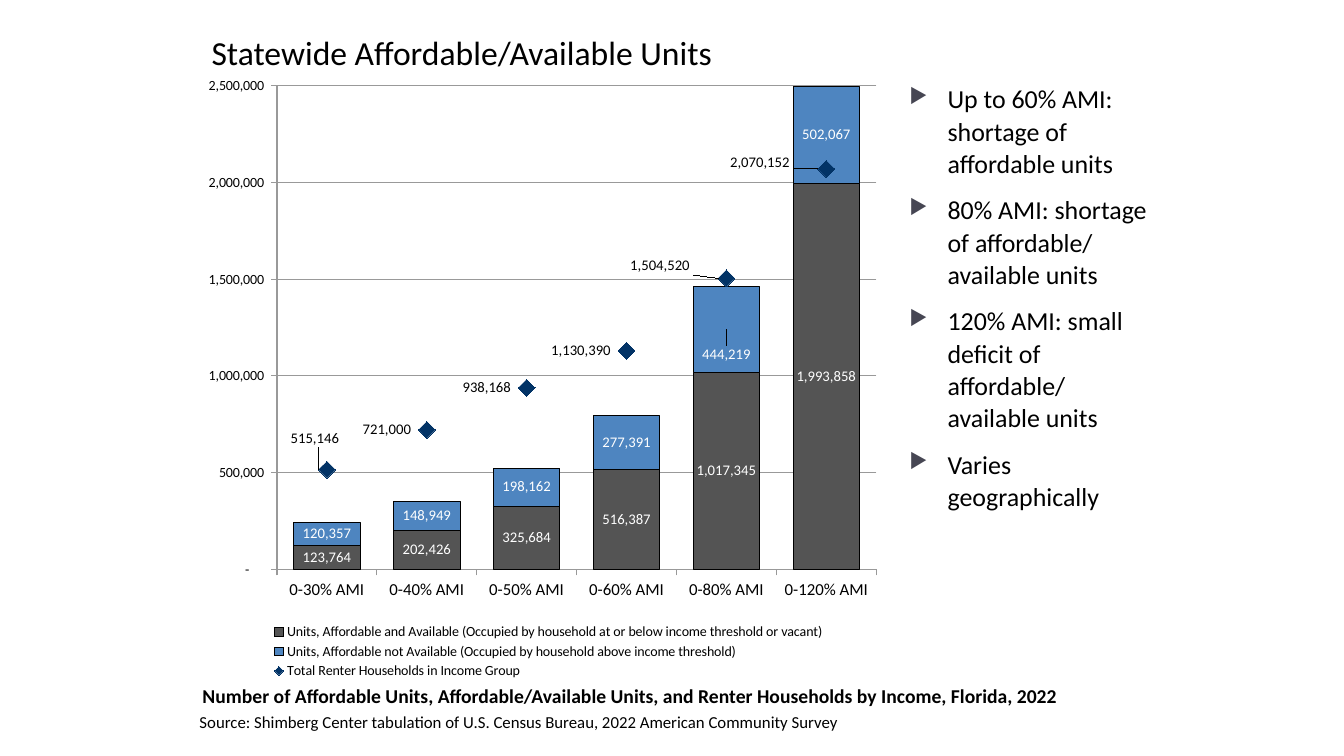
from lxml import etree
from pptx import Presentation
from pptx.chart.data import CategoryChartData
from pptx.dml.color import RGBColor
from pptx.enum.chart import (XL_CHART_TYPE, XL_LABEL_POSITION, XL_LEGEND_POSITION,
                             XL_MARKER_STYLE, XL_TICK_MARK)
from pptx.enum.text import MSO_ANCHOR
from pptx.oxml import parse_xml
from pptx.oxml.ns import nsdecls, qn
from pptx.util import Inches, Pt

STACKED = XL_CHART_TYPE.COLUMN_STACKED
CENTER, LEFT = XL_LABEL_POSITION.CENTER, XL_LABEL_POSITION.LEFT
LEGEND_BOTTOM = XL_LEGEND_POSITION.BOTTOM
DIAMOND = XL_MARKER_STYLE.DIAMOND
TICK_OUTSIDE = XL_TICK_MARK.OUTSIDE
ANCHOR_TOP, ANCHOR_BOTTOM = MSO_ANCHOR.TOP, MSO_ANCHOR.BOTTOM

BLACK = RGBColor(0x00, 0x00, 0x00)
WHITE = RGBColor(0xFF, 0xFF, 0xFF)
GRAY = RGBColor(0x54, 0x54, 0x54)
BLUE = RGBColor(0x4E, 0x85, 0xC0)
NAVY = RGBColor(0x02, 0x33, 0x66)
GRID = RGBColor(0x99, 0x99, 0x99)
BULLET_COLOR = "464653"

FONT = "Calibri"
NUMBER_FORMAT = r'_(* #,##0_);_(* \(#,##0\);_(* "-"??_);_('
CATEGORIES = [f"0-{limit}% AMI" for limit in (30, 40, 50, 60, 80, 120)]
AVAILABLE = ("Units, Affordable and Available (Occupied by household at or below "
             "income threshold or vacant)",
             (123764, 202426, 325684, 516387, 1017345, 1993858))
NOT_AVAILABLE = ("Units, Affordable not Available (Occupied by household above "
                 "income threshold)",
                 (120357, 148949, 198162, 277391, 444219, 502067))
RENTERS = ("Total Renter Households in Income Group",
           (515146, 721000, 938168, 1130390, 1504520, 2070152))
FINDINGS = [
    "Up to 60% AMI: shortage of affordable units",
    "80% AMI: shortage of affordable/ available units",
    "120% AMI: small deficit of affordable/ available units",
    "Varies geographically",
]


def add_text(slide, box, lines, size, bold=False, anchor=ANCHOR_TOP, space_before=0,
             line_spacing=None, bulleted=False):
    """Add a wrapped text box with one paragraph per line."""
    frame = slide.shapes.add_textbox(*map(Inches, box)).text_frame
    frame.word_wrap = True
    frame.vertical_anchor = anchor
    for index, line in enumerate(lines):
        paragraph = frame.paragraphs[0] if index == 0 else frame.add_paragraph()
        paragraph.text = line
        if bulleted:
            add_bullet(paragraph)
        paragraph.line_spacing = line_spacing
        paragraph.space_before = Pt(space_before if index else 0)
        paragraph.font.name = FONT
        paragraph.font.size = Pt(size)
        paragraph.font.bold = bold
        paragraph.font.color.rgb = BLACK


def add_bullet(paragraph):
    """Give a paragraph a hanging triangle bullet."""
    properties = paragraph._p.get_or_add_pPr()
    properties.set("marL", str(Inches(0.38)))
    properties.set("indent", str(-Inches(0.38)))
    color = etree.SubElement(properties, qn("a:buClr"))
    etree.SubElement(color, qn("a:srgbClr"), val=BULLET_COLOR)
    etree.SubElement(properties, qn("a:buSzPct"), val="80000")
    etree.SubElement(properties, qn("a:buChar"), char="▶")


def make_layout(**settings):
    """Return a manual chart layout with the given settings."""
    layout = parse_xml(f"<c:layout {nsdecls('c')}><c:manualLayout/></c:layout>")
    for name, value in settings.items():
        etree.SubElement(layout[0], qn(f"c:{name}"), val=str(value))
    return layout


def edge_layout(x, y, w, h, **target):
    """Return a layout fixed as fractions of the chart."""
    return make_layout(**target, xMode="edge", yMode="edge", x=x, y=y, w=w, h=h)


def move_to_line_plot(chart):
    """Draw the last series as a line on the axes of the columns."""
    bar_chart = chart.element.xpath(".//c:barChart")[0]
    series = bar_chart.xpath("c:ser")[-1]
    for element in series.xpath("c:invertIfNegative"):
        series.remove(element)
    line_chart = parse_xml(
        f'<c:lineChart {nsdecls("c")}><c:grouping val="standard"/>'
        '<c:varyColors val="0"/><c:marker val="1"/></c:lineChart>')
    line_chart.insert(2, series)
    for axis in bar_chart.xpath("c:axId"):
        etree.SubElement(line_chart, qn("c:axId"), val=axis.get("val"))
    bar_chart.addnext(line_chart)


def label_series(series, color, position, offsets):
    """Show values, shifting single labels by fractions of the chart."""
    labels = series.data_labels
    labels.show_value = True
    labels.number_format = NUMBER_FORMAT
    labels.number_format_is_linked = False
    labels.position = position
    label_fonts = [labels.font]
    for index, (x, y) in offsets.items():
        label = series.points[index].data_label
        label.position = position
        label_fonts.append(label.font)
        index_element = series._element.xpath(f"c:dLbls/c:dLbl/c:idx[@val='{index}']")[0]
        index_element.addnext(make_layout(x=x, y=y))
    for font in label_fonts:
        font.name = FONT
        font.size = Pt(10.5)
        font.color.rgb = color


def format_axes(chart):
    """Format both axes and the gridlines."""
    value_axis, category_axis = chart.value_axis, chart.category_axis
    value_axis.minimum_scale = 0
    value_axis.maximum_scale = 2500000
    value_axis.major_unit = 500000
    value_axis.has_major_gridlines = True
    value_axis.tick_labels.number_format = NUMBER_FORMAT
    value_axis.tick_labels.number_format_is_linked = False
    category_axis.tick_labels.font.size = Pt(12)
    for axis in (value_axis, category_axis):
        axis.major_tick_mark = TICK_OUTSIDE
    for line in (value_axis.format.line, category_axis.format.line,
                 value_axis.major_gridlines.format.line):
        line.color.rgb = GRID
        line.width = Pt(0.75)


def add_units_chart(slide, box):
    """Add stacked unit columns with renter households as diamonds."""
    data = CategoryChartData(number_format=NUMBER_FORMAT)
    data.categories = CATEGORIES
    for name, values in (AVAILABLE, NOT_AVAILABLE, RENTERS):
        data.add_series(name, values)
    chart = slide.shapes.add_chart(STACKED, *map(Inches, box), data).chart
    chart.has_title = False
    chart.font.name = FONT
    chart.font.size = Pt(10)
    chart.font.color.rgb = BLACK
    move_to_line_plot(chart)
    columns, markers = chart.plots
    columns.gap_width = 50
    columns.overlap = 100
    columns.vary_by_categories = False
    for series, color, offsets in zip(columns.series, (GRAY, BLUE), ({}, {4: (0, 0.04)})):
        series.format.fill.solid()
        series.format.fill.fore_color.rgb = color
        series.format.line.color.rgb = BLACK
        series.format.line.width = Pt(0.75)
        label_series(series, WHITE, CENTER, offsets)

    renters = markers.series[0]
    renters.smooth = False
    renters.format.line.fill.background()
    renters.marker.style = DIAMOND
    renters.marker.size = 12
    renters.marker.format.fill.solid()
    renters.marker.format.fill.fore_color.rgb = NAVY
    renters.marker.format.line.fill.background()
    label_series(renters, BLACK, LEFT,
                 {0: (0.04, -0.05), 4: (-0.03, -0.02), 5: (-0.03, -0.01)})
    format_axes(chart)

    chart.has_legend = True
    chart.legend.position = LEGEND_BOTTOM
    chart.legend.include_in_layout = False
    chart.legend.font.size = Pt(10)
    chart.element.xpath(".//c:legendPos")[0].addnext(edge_layout(0.1, 0.9, 0.82, 0.1))
    plot_area = chart.element.xpath(".//c:plotArea")[0]
    for element in plot_area.xpath("c:layout"):
        plot_area.remove(element)
    plot_area.insert(0, edge_layout(0.121, 0.033, 0.859, 0.784, layoutTarget="inner"))


def build_slide(presentation):
    """Place the title, chart, findings and source on a blank slide."""
    slide = presentation.slides.add_slide(presentation.slide_layouts[6])
    add_text(slide, (2, 0.1, 9.34, 0.67), ["Statewide Affordable/Available Units"], 24,
             anchor=ANCHOR_BOTTOM)
    add_text(slide, (1.91, 6.74, 9.26, 0.34),
             ["Number of Affordable Units, Affordable/Available Units, and Renter "
              "Households by Income, Florida, 2022"], 14, bold=True)
    add_text(slide, (1.88, 7.01, 9.59, 0.3),
             ["Source: Shimberg Center tabulation of U.S. Census Bureau, "
              "2022 American Community Survey"], 12)
    add_units_chart(slide, (1.91, 0.65, 6.92, 6.12))
    add_text(slide, (8.92, 0.76, 2.58, 5), FINDINGS, 18.5, space_before=10,
             line_spacing=1.04, bulleted=True)


def main():
    """Build and save the presentation."""
    presentation = Presentation()
    presentation.slide_width = Inches(13.33)
    presentation.slide_height = Inches(7.5)
    build_slide(presentation)
    presentation.save("out.pptx")


if __name__ == "__main__":
    main()
